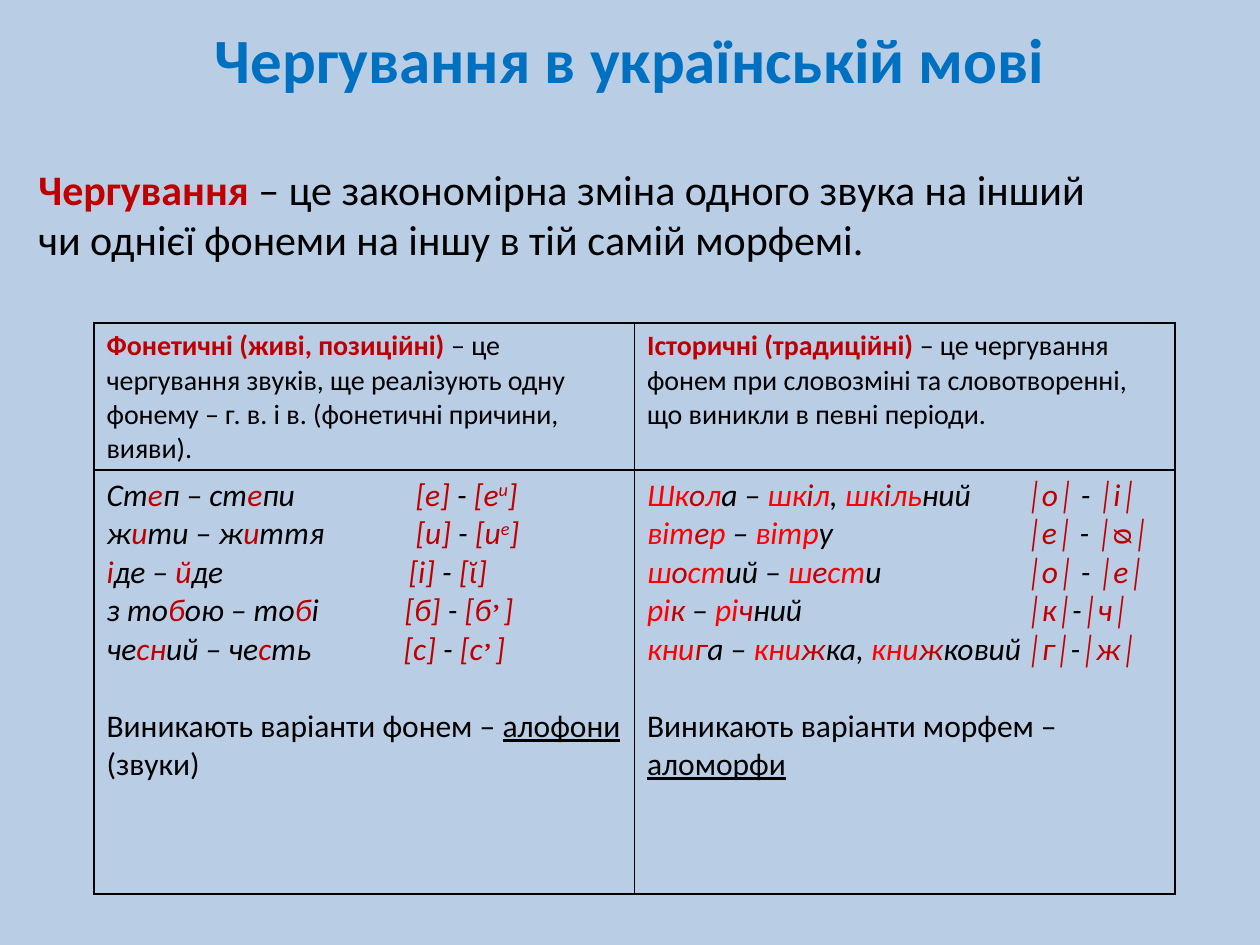
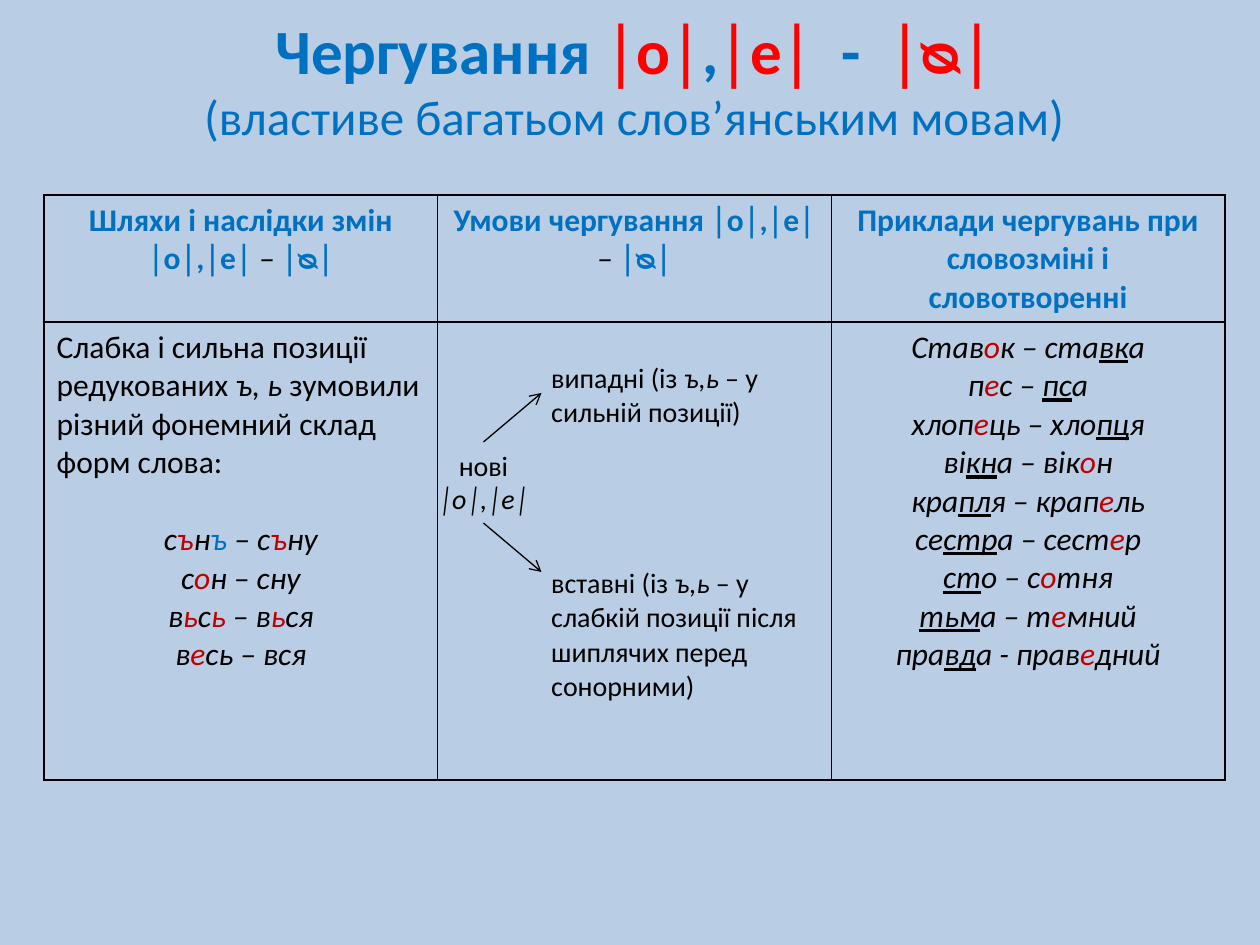
import pptx
import pptx.util
import pptx.dml.color
import pptx.enum.shapes
import pptx.enum.text
import pptx.oxml
import pptx.oxml.ns
from dataclasses import dataclass

SCALE = 914400 / 126  # EMU in one px
CENTER = pptx.enum.text.PP_ALIGN.CENTER
LEFT = pptx.enum.text.PP_ALIGN.LEFT


@dataclass(frozen=True)
class Theme:
    font: str = "Calibri"
    accent_font: str = "Times New Roman"
    background: str = "B9CDE5"
    ink: str = "000000"
    blue: str = "0070C0"
    dark_red: str = "C00000"
    red: str = "FF0000"
    title: int = 36
    subtitle: int = 28
    lead: int = 24
    body: int = 18
    small: int = 16
    mark: int = 14


T = Theme()

# Inline markup {key:text} and the format each key stands for
STYLES = {
    "d": dict(color=T.dark_red),
    "r": dict(color=T.red),
    "b": dict(color=T.blue),
    "t": dict(color=T.dark_red, bold=True),
    "i": dict(italic=True),
    "u": dict(underline=True),
    "k": dict(color=T.ink, bold=False, italic=True),
    "s": dict(color=T.dark_red, baseline=30),
    "x": dict(color=T.dark_red, font=T.accent_font, size=T.mark, bold=True, spacing=2.5),
    "w": dict(spacing=8),
}


def px(n):
    return pptx.util.Emu(round(n * SCALE))


def xml(tag, inner="", **attrs):
    values = " ".join(f'{k}="{v}"' for k, v in attrs.items())
    return pptx.oxml.parse_xml(
        f'<a:{tag} {pptx.oxml.ns.nsdecls("a")} {values}>{inner}</a:{tag}>')


# Text
def add_run(p, text, size=T.body, color=T.ink, font=T.font, bold=False,
            italic=False, underline=False, baseline=0, spacing=0):
    r = p.add_run()
    r.text = text
    f = r.font
    f.size, f.name = pptx.util.Pt(size), font
    f.bold, f.italic, f.underline = bold, italic, underline
    f.color.rgb = pptx.dml.color.RGBColor.from_string(color)
    if baseline:
        r._r.get_or_add_rPr().set("baseline", str(baseline * 1000))
    if spacing:
        r._r.get_or_add_rPr().set("spc", str(round(spacing * 100)))


def add_rich(p, markup, **fmt):
    """Write a paragraph of {key:text} markup; a newline is a line break."""
    def put(text, style):
        for n, line in enumerate(text.split("\n")):
            if n:
                p.add_line_break()
            if line:
                add_run(p, line, **{**fmt, **style})

    plain, *pieces = markup.split("{")
    put(plain, {})
    for piece in pieces:
        marked, _, plain = piece.partition("}")
        key, _, text = marked.partition(":")
        put(text, STYLES[key])
        put(plain, {})


def para(markup, align=LEFT, before=0, indent=0, tab=0, **fmt):
    return dict(markup=markup, align=align, before=before, indent=indent, tab=tab, fmt=fmt)


def fill_text(tf, paras):
    for n, item in enumerate(paras):
        p = tf.add_paragraph() if n else tf.paragraphs[0]
        p.alignment = item["align"]
        if item["before"]:
            p.space_before = pptx.util.Pt(item["before"])
        pPr = p._p.get_or_add_pPr()
        if item["indent"]:
            pPr.set("marL", str(px(item["indent"])))
            pPr.set("indent", "0")
        if item["tab"]:
            stop = xml("tab", pos=px(item["tab"]), algn="l")
            tabs = xml("tabLst")
            tabs.append(stop)
            pPr.append(tabs)
        add_rich(p, item["markup"], **item["fmt"])


def add_text(s, box, paras, wrap=True, middle=False):
    sp = s.shapes.add_textbox(*map(px, box))
    tf = sp.text_frame
    tf.word_wrap = wrap
    if middle:
        tf.vertical_anchor = pptx.enum.text.MSO_ANCHOR.MIDDLE
    fill_text(tf, paras)
    return sp


# Shared parts
def new_slide(prs):
    s = prs.slides.add_slide(prs.slide_layouts[6])
    s.background.fill.solid()
    s.background.fill.fore_color.rgb = pptx.dml.color.RGBColor.from_string(T.background)
    return s


def add_title(s, box, title, subtitle=None):
    paras = [para(title, CENTER, size=T.title, color=T.blue, bold=True)]
    if subtitle:
        paras.append(para(subtitle, CENTER, size=T.subtitle, color=T.blue))
    add_text(s, box, paras, middle=True)


def add_grid(s, box, heights, cells):
    """Table with equal columns, no fills and thin black rules."""
    tbl = s.shapes.add_table(len(cells), len(cells[0]), *map(px, box)).table
    tbl.first_row = tbl.horz_banding = False
    for row, height, contents in zip(tbl.rows, heights, cells):
        row.height = px(height)
        for cell, paras in zip(row.cells, contents):
            cell.fill.background()
            tcPr = cell._tc.get_or_add_tcPr()
            ink = f'<a:solidFill><a:srgbClr val="{T.ink}"/></a:solidFill>'
            for n, side in enumerate(("lnL", "lnR", "lnT", "lnB")):
                tcPr.insert(n, xml(side, ink, w=12700))
            fill_text(cell.text_frame, paras)
    return tbl


def add_arrow(s, label, side, dx, dy):
    """Arrow from the middle of the label's top (0) or bottom (2) side."""
    x = label.left + label.width // 2
    y = label.top + (label.height if side == 2 else 0)
    c = s.shapes.add_connector(pptx.enum.shapes.MSO_CONNECTOR.STRAIGHT,
                               x, y, x + px(dx), y + px(dy))
    c.begin_connect(label, side)
    c.line.width = pptx.util.Pt(0.75)
    c.line.color.rgb = pptx.dml.color.RGBColor.from_string(T.ink)
    c.line._get_or_add_ln().append(xml("tailEnd", type="arrow"))
    c._element.spPr.append(xml("effectLst"))


# Slide 1: the two kinds of alternation
PHONETIC = [
    ("Ст{d:е}п – ст{d:е}пи\t{d:[е]} - {d:[е}{s:и}{d:]}", 309),
    ("ж{d:и}ти – ж{d:и}ття\t{d:[и]} - {d:[и}{s:е}{d:]}", 309),
    ("{d:і}де – {d:й}де\t{d:[і]} - {d:[ῐ]}", 302),
    ("з то{d:б}ою – то{d:б}і\t{d:[б]} - {d:[б}{x:’}{d:]}", 298),
    ("че{d:сн}ий – че{d:с}ть\t{d:[с]} - {d:[с}{x:’}{d:]}", 297),
]
HISTORICAL = [
    "{r:Шк}{d:о}{r:л}а – {r:шк}{d:і}{r:л}, {r:шк}{d:і}{r:ль}ний\t{d:│о│} - {d:│і│}",
    "{r:віт}{d:е}{r:р} – {r:вітр}у\t{d:│е│} - {d:│ᴓ│}",
    "{r:ш}{d:о}{r:ст}ий – {r:ш}{d:е}{r:ст}и\t{d:│о│} - {d:│е│}",
    "{r:рі}{d:к} – {r:рі}{d:ч}ний\t{d:│к│}-{d:│ч│}",
    "{r:кни}{d:г}а – {r:кни}{d:ж}ка, {r:кни}{d:ж}ковий\t{d:│г│}-{d:│ж│}",
]


def kinds_slide(prs):
    s = new_slide(prs)
    add_title(s, (15, 0, 1230, 116), "Чергування в українській мові")
    add_text(s, (26, 157, 1111, 114), [para(
        "{t:Чергування }– це закономірна зміна одного звука на інший "
        "чи однієї фонеми на іншу в тій самій морфемі.", size=T.lead)])
    heads = [
        "{t:Фонетичні (живі, позиційні) }– це чергування звуків, ще реалізують "
        "одну фонему – г. в. і в. (фонетичні причини, вияви).",
        "{t:Історичні (традиційні) }– це чергування фонем при словозміні та "
        "словотворенні, що виникли в певні періоди.",
    ]
    phonetic = [para(m, tab=tab, italic=True) for m, tab in PHONETIC]
    phonetic.append(para("Виникають варіанти фонем – {u:алофони} (звуки)", before=22))
    historical = [para(m, tab=379, italic=True) for m in HISTORICAL]
    historical.append(para("Виникають варіанти морфем – {u:аломорфи}", before=22))
    add_grid(s, (94, 323, 1081, 571), (147, 424),
             [[[para(h, size=T.small)] for h in heads], [phonetic, historical]])


# Slide 2: alternation with zero sound
OLD_FORMS = ["с{d:ъ}н{b:ъ} – с{d:ъ}ну", "с{d:о}н – сну", "в{d:ь}с{d:ь} – в{d:ь}ся",
             "в{d:е}сь – вся"]
EXAMPLES = ["Став{d:о}к – ста{u:вк}а", "п{d:е}с – {u:пс}а", "хлоп{d:е}ць – хло{u:пц}я",
            "ві{u:кн}а – вік{d:о}н", "кра{u:пл}я – крап{d:е}ль",
            "се{u:стр}а – сест{d:е}р", "{u:ст}о – с{d:о}тня",
            "{u:тьм}а – т{d:е}мний", "пра{u:вд}а - прав{d:е}дний"]


def zero_slide(prs):
    s = new_slide(prs)
    add_title(s, (4, 0, 1260, 157),
              "Чергування {r:│о│},{r:│е│}{w: }-{w: }{r:│ᴓ│}",
              "(властиве багатьом слов’янським мовам)")
    heads = ["Шляхи і наслідки змін\n│о│,│е│ {k:–} │ᴓ│",
             "Умови чергування │о│,│е│ {k:–} │ᴓ│",
             "Приклади чергувань при словозміні і словотворенні"]
    causes = [para("Слабка і сильна позиції редукованих {i:ъ, ь }зумовили "
                   "різний фонемний склад форм слова:")]
    causes += [para(m, CENTER, before=0 if n else 22, italic=True)
               for n, m in enumerate(OLD_FORMS)]
    conditions = [
        para("випадні (із {i:ъ,ь} – у\nсильній позиції)", indent=101, size=T.small),
        para("вставні (із {i:ъ,ь} – у\nслабкій позиції після\nшиплячих перед\nсонорними)",
             indent=101, before=78, size=T.small),
    ]
    examples = [para(m, CENTER, italic=True) for m in EXAMPLES]
    tbl = add_grid(s, (44, 195, 1181, 585), (127, 458), [
        [[para(h, CENTER, color=T.blue, bold=True)] for h in heads],
        [causes, conditions, examples]])
    tbl.cell(1, 1).margin_top = px(40)

    # Label with its two branches
    label = add_text(s, (425, 442, 117, 81), [
        para("нові\n{i:│о│,│е│}", CENTER, size=T.small)], wrap=False)
    add_arrow(s, label, 0, 58, -49)
    add_arrow(s, label, 2, 58, 49)


def main():
    prs = pptx.Presentation()
    prs.slide_width, prs.slide_height = px(1260), px(945)
    kinds_slide(prs)
    zero_slide(prs)
    prs.save("out.pptx")


if __name__ == "__main__":
    main()
